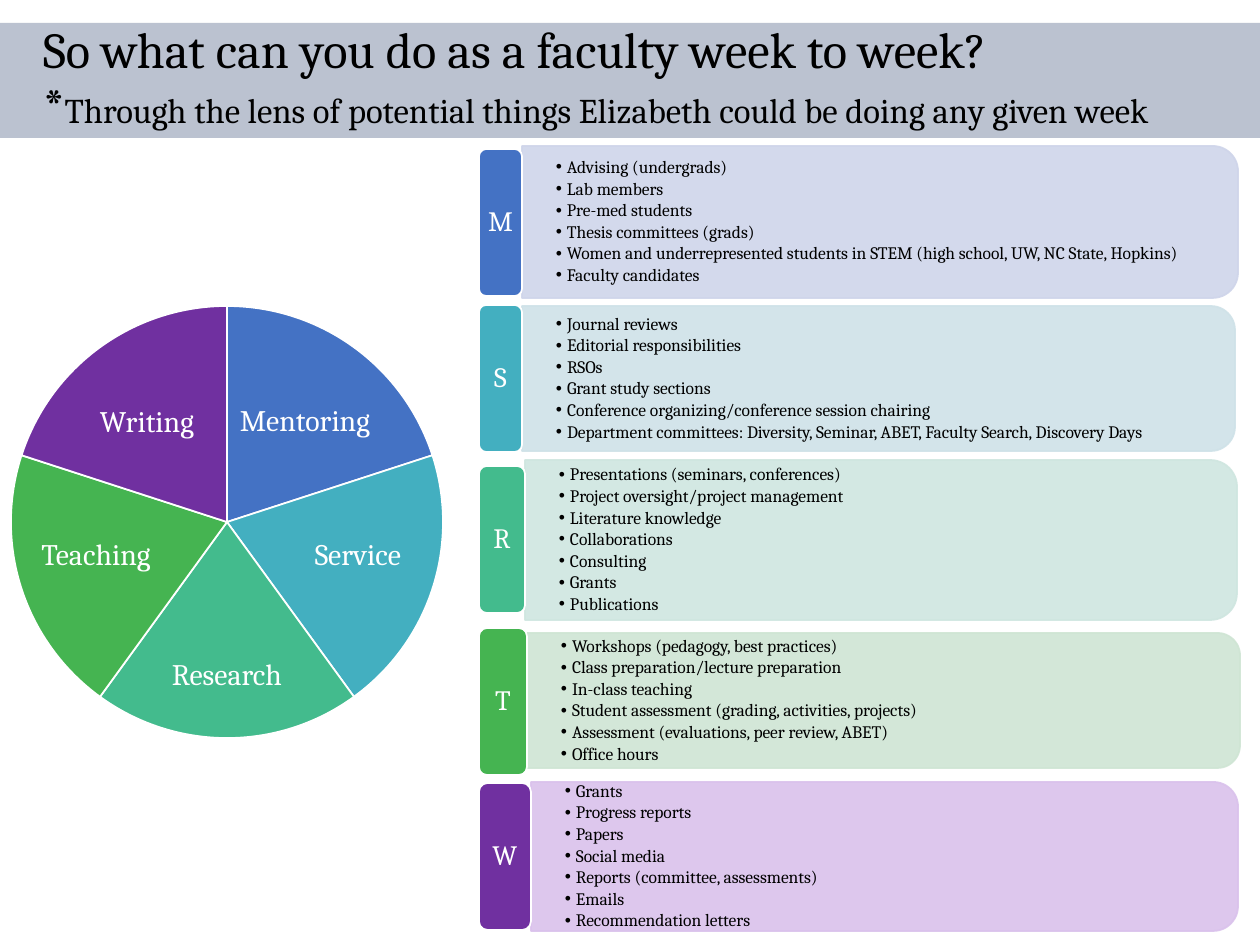
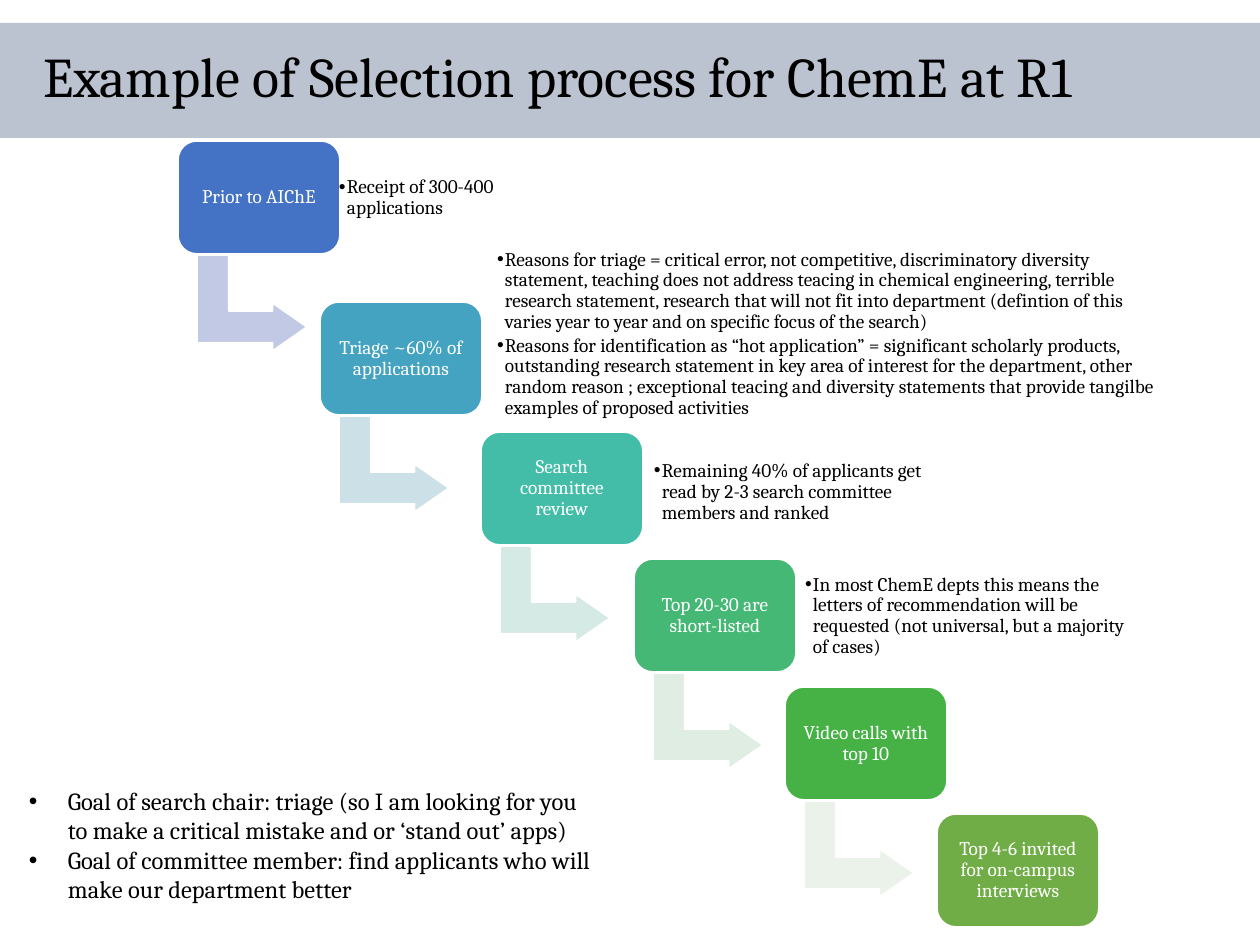
from pptx import Presentation
from pptx import util as u
from pptx.dml.color import RGBColor
from pptx.enum import shapes, text
from pptx.oxml.ns import qn
from lxml import etree

PX = 914400 / 126
FONT = "Cambria"
SHAPE = shapes.MSO_SHAPE
MIDDLE, TOP = text.MSO_ANCHOR.MIDDLE, text.MSO_ANCHOR.TOP
LEFT, CENTER = text.PP_ALIGN.LEFT, text.PP_ALIGN.CENTER

BLACK = RGBColor(0x00, 0x00, 0x00)
WHITE = RGBColor(0xFF, 0xFF, 0xFF)
NAVY = RGBColor(0x20, 0x38, 0x64)
BLUE = RGBColor(0x44, 0x72, 0xC4)
TEAL = RGBColor(0x43, 0xAF, 0xC0)
MINT = RGBColor(0x43, 0xBB, 0x8D)
GREEN = RGBColor(0x45, 0xB4, 0x51)
PURPLE = RGBColor(0x70, 0x30, 0xA0)
PALE_BLUE = RGBColor(0xCF, 0xD5, 0xEA)
PALE_TEAL = RGBColor(0xCF, 0xE2, 0xE8)
PALE_MINT = RGBColor(0xCF, 0xE6, 0xE0)
PALE_GREEN = RGBColor(0xCF, 0xE5, 0xD4)
PALE_PURPLE = RGBColor(0xDA, 0xC2, 0xEC)
STEP_COLORS = [BLUE, RGBColor(0x44, 0xA3, 0xC0), RGBColor(0x43, 0xBD, 0xA7),
               RGBColor(0x44, 0xB8, 0x74), RGBColor(0x46, 0xB2, 0x46), RGBColor(0x70, 0xAD, 0x47)]
ARROW_COLORS = [RGBColor(0xC1, 0xC9, 0xE4), RGBColor(0xCB, 0xE0, 0xE7), RGBColor(0xD6, 0xEA, 0xE5),
                RGBColor(0xE0, 0xED, 0xE3), RGBColor(0xEB, 0xF2, 0xE9)]

# label, label centre, tab colour, panel colour, tab top, tab width, panel (top, width, height), items
ACTIVITIES = [
    ("Mentoring", (305, 422), BLUE, PALE_BLUE, 149, 43, (146, 716, 152), [
        "Advising (undergrads)", "Lab members", "Pre-med students", "Thesis committees (grads)",
        "Women and underrepresented students in STEM (high school, UW, NC State, Hopkins)",
        "Faculty candidates"]),
    ("Service", (358, 556), TEAL, PALE_TEAL, 305, 43, (306, 713, 145), [
        "Journal reviews", "Editorial responsibilities", "RSOs", "Grant study sections",
        "Conference organizing/conference session chairing",
        "Department committees: Diversity, Seminar, ABET, Faculty Search, Discovery Days"]),
    ("Research", (227, 676), MINT, PALE_MINT, 466, 46, (460, 712, 160), [
        "Presentations (seminars, conferences)", "Project oversight/project management",
        "Literature knowledge", "Collaborations", "Consulting", "Grants", "Publications"]),
    ("Teaching", (96, 556), GREEN, PALE_GREEN, 628, 48, (633, 713, 135), [
        "Workshops (pedagogy, best practices)", "Class preparation/lecture preparation",
        "In-class teaching", "Student assessment (grading, activities, projects)",
        "Assessment (evaluations, peer review, ABET)", "Office hours"]),
    ("Writing", (147, 423), PURPLE, PALE_PURPLE, 783, 52, (782, 707, 149), [
        "Grants", "Progress reports", "Papers", "Social media",
        "Reports (committee, assessments)", "Emails", "Recommendation letters"]),
]

# step, box corner, note box, note paragraphs
STEPS = [
    ("Prior to AIChE", (178, 141), (333, 152, 192, 92), ["Receipt of 300-400 applications"]),
    ("Triage ~60% of applications", (320, 302), (491, 242, 684, 184), [
        "Reasons for triage = critical error, not competitive, discriminatory diversity statement, "
        "teaching does not address teacing in chemical engineering, terrible research statement, "
        "research that will not fit into department (defintion of this varies year to year and on "
        "specific focus of the search)",
        "Reasons for identification as “hot application” = significant scholarly products, "
        "outstanding research statement in key area of interest for the department, other random "
        "reason ; exceptional teacing and diversity statements that provide tangilbe examples of "
        "proposed activities"]),
    ("Search committee review", (481, 432), (648, 446, 291, 92), [
        "Remaining 40% of applicants get read by 2-3 search committee members and ranked"]),
    ("Top 20-30 are short-listed", (634, 559), (799, 570, 349, 92), [
        "In most ChemE depts this means the letters of recommendation will be requested "
        "(not universal, but a majority of cases)"]),
    ("Video calls with top 10", (785, 687), None, []),
    ("Top 4-6 invited for on-campus interviews", (937, 814), None, []),
]
GOALS = [
    "Goal of search chair: triage (so I am looking for you to make a critical mistake and or "
    "‘stand out’ apps)",
    "Goal of committee member: find applicants who will make our department better",
]


def px(n):
    return u.Emu(round(n * PX))


class Deck:
    def __init__(self):
        self.prs = Presentation()
        self.prs.slide_width, self.prs.slide_height = px(1260), px(945)
        self.s = None

    def new_slide(self, title_lines):
        """Start a slide with its band; each title line is a list of (text, size) runs."""
        self.s = self.prs.slides.add_slide(self.prs.slide_layouts[5])
        band = self.shape(SHAPE.RECTANGLE, (0, 23, 1260, 115), NAVY, line=None, alpha=30)
        self.s.shapes.element.insert(2, band.element)
        title = self.s.shapes.title
        title.left, title.top, title.width, title.height = map(px, (30, 23, 1230, 113))
        tf = self.frame(title, (13, 6), MIDDLE)
        for i, runs in enumerate(title_lines):
            self.paragraph(tf, i, runs, BLACK, LEFT)

    def frame(self, sp, inset, anchor):
        tf = sp.text_frame
        tf.word_wrap = True
        tf.auto_size = text.MSO_AUTO_SIZE.NONE
        tf.vertical_anchor = anchor
        tf.margin_left = tf.margin_right = px(inset[0])
        tf.margin_top = tf.margin_bottom = px(inset[1])
        return tf

    def paragraph(self, tf, index, runs, color, align, spacing=0.9):
        p = tf.add_paragraph() if index else tf.paragraphs[0]
        p.alignment, p.line_spacing = align, spacing
        for words, size in runs:
            r = p.add_run()
            r.text = words
            r.font.name, r.font.size = FONT, u.Pt(size)
            r.font.color.rgb = color
        return p

    def shape(self, kind, box, fill, line=WHITE, alpha=100, adj=()):
        sp = self.s.shapes.add_shape(kind, *map(px, box))
        sp.shadow.inherit = False
        sp.fill.solid()
        sp.fill.fore_color.rgb = fill
        if line is None:
            sp.line.fill.background()
        else:
            sp.line.color.rgb = line
            sp.line.width = u.Pt(1)
        for i, value in enumerate(adj):
            sp.adjustments[i] = value
        if alpha < 100:
            for clr in sp.element.spPr.iter(qn("a:srgbClr")):
                etree.SubElement(clr, qn("a:alpha"), val=str(alpha * 1000))
        return sp

    def turned(self, kind, box, fill, **style):
        """Add a shape turned 90° that covers the given box on the slide."""
        x, y, w, h = box
        sp = self.shape(kind, (x + (w - h) / 2, y + (h - w) / 2, h, w), fill, **style)
        sp.rotation = 90
        return sp

    def caption(self, sp, words, size, inset=6):
        tf = self.frame(sp, (inset, inset), MIDDLE)
        self.paragraph(tf, 0, [(words, size)], WHITE, CENTER)

    def label(self, center, words, size):
        x, y = center
        box = (x - 73, y - 50, 146, 100)
        self.caption(self.s.shapes.add_textbox(*map(px, box)), words, size, 3)

    def bullets(self, box, items, size, inset, hang, indent=None, anchor=MIDDLE,
                spacing=0.9, after=0.15):
        tf = self.frame(self.s.shapes.add_textbox(*map(px, box)), inset, anchor)
        for i, item in enumerate(items):
            p = self.paragraph(tf, i, [(item, size)], BLACK, LEFT, spacing)
            p.space_after = u.Pt(size * after)
            pPr = p._p.get_or_add_pPr()
            pPr.set("marL", str(px(indent or hang)))
            pPr.set("indent", str(-px(hang)))
            etree.SubElement(pPr, qn("a:buFont"), typeface="Arial")
            etree.SubElement(pPr, qn("a:buChar"), char="•")


def weekly_activities(deck):
    deck.new_slide([
        [("So what can you do as a faculty week to week?", 28.8)],
        [("*", 28.8),
         ("Through the lens of potential things Elizabeth could be doing any given week", 19.8)]])
    full_turn, top = 216, 162  # angles in units of 100000/60000 degree
    slice_angle = full_turn / len(ACTIVITIES)
    for i, (name, center, color, *_) in enumerate(ACTIVITIES):
        start = top + i * slice_angle
        angles = [start % full_turn, (start + slice_angle) % full_turn]
        deck.shape(SHAPE.PIE, (11, 306, 432, 432), color, adj=angles)
        deck.label(center, name, 17)
    tab_left = 479
    for name, _, color, pale, tab_top, tab_w, (y, w, h), items in ACTIVITIES:
        panel = (tab_left + tab_w, y, w, h)
        deck.turned(SHAPE.ROUND_2_SAME_RECTANGLE, panel, pale, line=pale, alpha=90)
        deck.bullets(panel, items, 10, inset=(34, 0), hang=11)
        tab = deck.shape(SHAPE.ROUNDED_RECTANGLE, (tab_left, tab_top, tab_w, 147), color)
        deck.caption(tab, name[0], 16, 4)


def selection_process(deck):
    deck.new_slide([[("Example of Selection process for ChemE at R1", 32)]])
    for i, (step, (x, y), note_box, notes) in enumerate(STEPS):
        if i < len(ARROW_COLORS):
            deck.turned(SHAPE.BENT_UP_ARROW, (x + 19, y + 114, 110, 96), ARROW_COLORS[i],
                        adj=(0.33, 0.25, 0.36))
        sp = deck.shape(SHAPE.ROUNDED_RECTANGLE, (x, y, 162, 113), STEP_COLORS[i])
        deck.caption(sp, step, 11)
        if notes:
            deck.bullets(note_box, notes, 11, inset=(6, 6), hang=8)
    deck.bullets((0, 780, 615, 131), GOALS, 14, inset=(13, 6), hang=39, indent=55,
                 anchor=TOP, spacing=1.0, after=0)


def main():
    deck = Deck()
    weekly_activities(deck)
    selection_process(deck)
    deck.prs.save("out.pptx")


if __name__ == "__main__":
    main()
